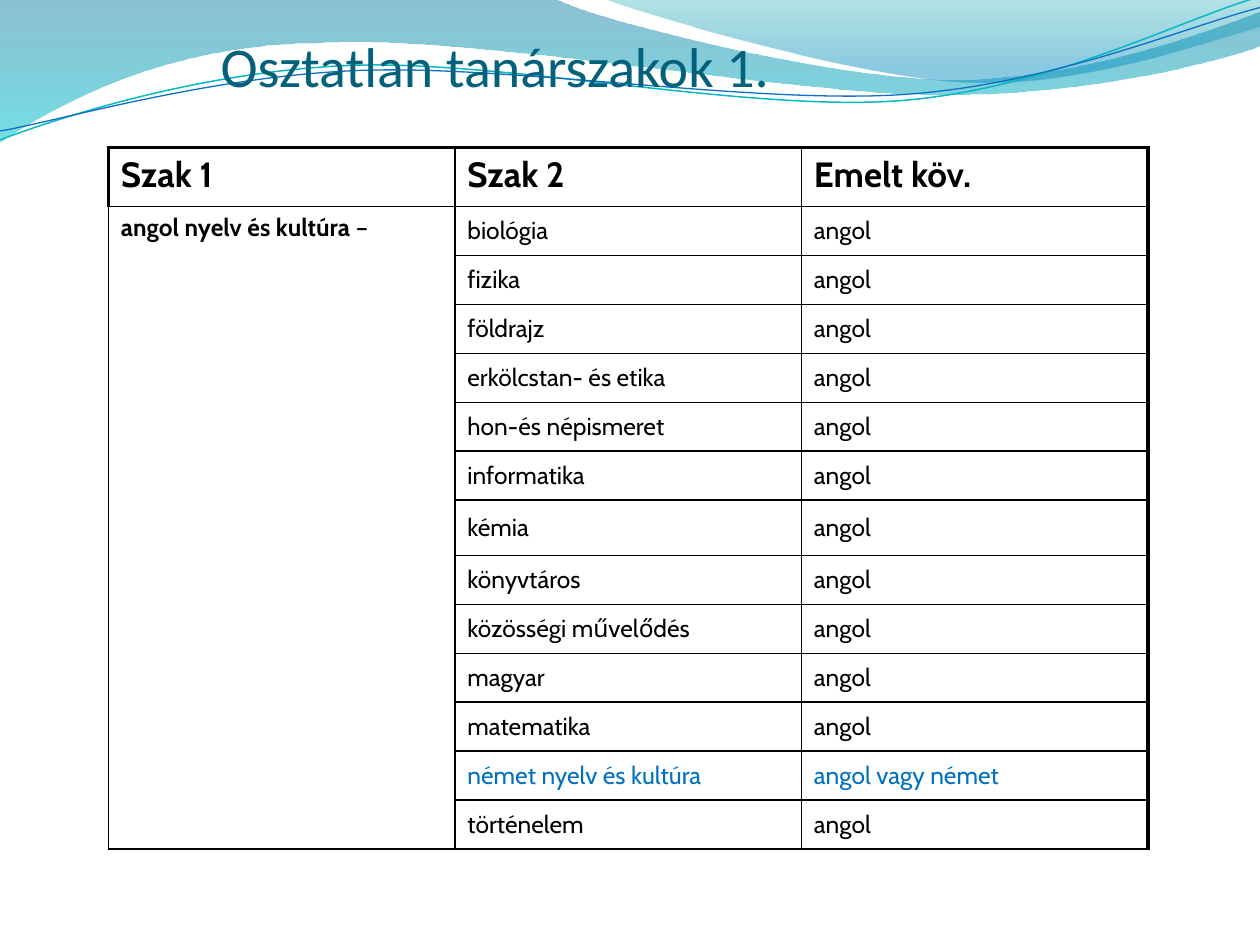
from math import cos, radians, sin

from lxml.etree import SubElement
from pptx import Presentation
from pptx.dml.color import RGBColor
from pptx.enum.text import MSO_ANCHOR
from pptx.oxml.ns import qn
from pptx.util import Inches, Pt

BLACK = RGBColor(0x00, 0x00, 0x00)
TITLE_TEAL = RGBColor(0x04, 0x61, 0x7B)
ACCENT_BLUE = RGBColor(0x00, 0x70, 0xC0)
LINE_TEAL = RGBColor(0x0A, 0xB8, 0xBF)
LINE_BLUE = RGBColor(0x0F, 0x6F, 0xC6)
BAND_BLUE = RGBColor(0x00, 0x74, 0xA1)
BAND_TEAL = RGBColor(0x00, 0xC6, 0xCF)
CREST_TEAL = RGBColor(0x00, 0xA1, 0xA9)
CREST_BLUE = RGBColor(0x00, 0x8B, 0xBF)

# Outlines in inches: each step holds one point, or three for a Bezier curve
LEFT_BAND = [
    [(0, -0.01)], [(4.4, -0.01)],
    [(4.76, 0.17), (6.64, 0.63), (7.58, 0.63)],
    [(8.53, 0.63), (9.58, 0.26), (10, 0.09)],
    [(10.01, 0.36)],
    [(9.83, 0.44), (8.7, 0.76), (7.46, 0.75)],
    [(6.22, 0.75), (3.82, 0.28), (2.57, 0.34)],
    [(1.29, 0.35), (0.46, 0.83), (-0.01, 1.13)],
    [(0, -0.01)],
]
RIGHT_CREST = [
    [(4.79, -0.01)],
    [(5.09, 0.11), (6.82, 0.62), (7.69, 0.65)],
    [(8.56, 0.69), (9.61, 0.32), (10, 0.21)],
    [(10, 0)], [(4.79, -0.01)],
]
TEAL_WAVE = [
    [(0, 1.11)],
    [(0.48, 0.93), (1.58, 0.57), (2.77, 0.52)],
    [(3.95, 0.47), (5.93, 0.89), (7.13, 0.8)],
    [(8.33, 0.71), (9.38, 0.15), (9.98, -0.02)],
]
BLUE_WAVE = [
    [(0, 1.04)],
    [(0.47, 0.96), (1.64, 0.61), (2.83, 0.56)],
    [(4.03, 0.51), (5.97, 0.83), (7.17, 0.75)],
    [(8.36, 0.67), (9.41, 0.21), (10, 0.06)],
]
WAVE_CENTER = (4.99, 0.58)
WAVE_TILT = -2.7

HEADERS = ["Szak 1", "Szak 2", "Emelt köv."]
GERMAN = "német nyelv és kultúra"
SECOND_MAJORS = [
    "biológia", "fizika", "földrajz", "erkölcstan- és etika",
    "hon-és népismeret", "informatika", "kémia", "könyvtáros",
    "közösségi művelődés", "magyar", "matematika", GERMAN, "történelem",
]
TABLE_HEIGHT, HEADER_HEIGHT, TALL_HEIGHT = 5.57, 0.47, 0.44


def add_text(paragraph, text, size=14, font="Cabin", color=BLACK, bold=False):
    run = paragraph.add_run()
    run.text = text
    run.font.size = Pt(size)
    run.font.name = font
    run.font.bold = bold
    run.font.color.rgb = color


def add_outline(slide, outline, close):
    """Build a freeform through the step ends, then bend its curved steps."""
    start, *ends = [tuple(Inches(v) for v in step[-1]) for step in outline]
    builder = slide.shapes.build_freeform(*start)
    builder.add_line_segments(ends, close=close)
    wave = builder.convert_to_shape()
    wave.shadow.inherit = False
    segments = list(wave._element.iter(qn("a:lnTo")))
    for segment, step in zip(segments, outline[1:]):
        if len(step) == 3:
            segment.tag = qn("a:cubicBezTo")
            for i, (x, y) in enumerate(step[:2]):
                control = SubElement(segment, qn("a:pt"), x=str(Inches(x) - wave.left),
                                     y=str(Inches(y) - wave.top))
                segment.insert(i, control)
    return wave


def add_band(slide, outline, stops):
    """Add a borderless band; each stop is position %, colour, opacity %."""
    band = add_outline(slide, outline, close=True)
    band.line.fill.background()
    band.fill.gradient()
    gradient = band.fill._xPr.find(qn("a:gradFill"))
    for child in list(gradient):
        gradient.remove(child)
    stop_list = SubElement(gradient, qn("a:gsLst"))
    for position, color, opacity in stops:
        stop = SubElement(stop_list, qn("a:gs"), pos=str(position * 1000))
        rgb = SubElement(stop, qn("a:srgbClr"), val=str(color))
        SubElement(rgb, qn("a:alpha"), val=str(opacity * 1000))
    SubElement(gradient, qn("a:lin"), ang="5400000", scaled="0")


def level(point):
    """Turn a point of a tilted wave back to the level."""
    angle = radians(-WAVE_TILT)
    dx, dy = point[0] - WAVE_CENTER[0], point[1] - WAVE_CENTER[1]
    return (WAVE_CENTER[0] + dx * cos(angle) - dy * sin(angle),
            WAVE_CENTER[1] + dx * sin(angle) + dy * cos(angle))


def add_wave_line(slide, outline, color, width):
    leveled = [[level(point) for point in step] for step in outline]
    wave = add_outline(slide, leveled, close=False)
    wave.rotation = WAVE_TILT
    wave.fill.background()
    wave.line.color.rgb = color
    wave.line.width = Pt(width)


def add_title(slide, text):
    title = slide.shapes.add_textbox(Inches(1.75), Inches(0.21), Inches(8.25), Inches(0.57))
    frame = title.text_frame
    frame.word_wrap = True
    frame.vertical_anchor = MSO_ANCHOR.BOTTOM
    frame.margin_left = frame.margin_right = frame.margin_bottom = 0
    add_text(frame.paragraphs[0], text, size=32, font="Calibri", color=TITLE_TEAL)


def set_borders(cell, left=1, right=1, top=1, bottom=1):
    properties = cell._tc.get_or_add_tcPr()
    sides = (("a:lnL", left), ("a:lnR", right), ("a:lnT", top), ("a:lnB", bottom))
    for tag, width in sides:
        border = SubElement(properties, qn(tag), w=str(Pt(width)))
        fill = SubElement(border, qn("a:solidFill"))
        SubElement(fill, qn("a:srgbClr"), val=str(BLACK))


def add_majors_table(slide):
    row_count = len(SECOND_MAJORS) + 1
    table = slide.shapes.add_table(
        row_count, len(HEADERS), Inches(0.86), Inches(1.17),
        Inches(8.25), Inches(TABLE_HEIGHT)).table
    table.first_row = table.horz_banding = False
    for column in table.columns:
        column.width = Inches(2.75)
    plain_height = (TABLE_HEIGHT - HEADER_HEIGHT - TALL_HEIGHT) / (row_count - 2)
    for row in table.rows:
        row.height = Inches(plain_height)
    table.rows[0].height = Inches(HEADER_HEIGHT)
    table.rows[SECOND_MAJORS.index("kémia") + 1].height = Inches(TALL_HEIGHT)

    # Thick rule along the top, right side and header's left side
    for r in range(row_count):
        for c in range(len(HEADERS)):
            cell = table.cell(r, c)
            set_borders(cell,
                        left=2.25 if r == c == 0 else 1,
                        right=2.25 if c == len(HEADERS) - 1 else 1,
                        top=2.25 if r == 0 else 1)
            cell.fill.background()

    # Header row
    for c, header in enumerate(HEADERS):
        add_text(table.cell(0, c).text_frame.paragraphs[0], header, size=20, bold=True)

    # First major spans all the rows below the header
    first_major = table.cell(1, 0)
    first_major.merge(table.cell(row_count - 1, 0))
    paragraph = first_major.text_frame.paragraphs[0]
    add_text(paragraph, "angol nyelv és kultúra", bold=True)
    add_text(paragraph, " –")

    # Second majors with their advanced-level requirement
    for r, major in enumerate(SECOND_MAJORS, start=1):
        is_german = major == GERMAN
        requirement = "angol vagy német" if is_german else "angol"
        for c, text in enumerate((major, requirement), start=1):
            cell = table.cell(r, c)
            cell.vertical_anchor = MSO_ANCHOR.MIDDLE
            add_text(cell.text_frame.paragraphs[0], text,
                     color=ACCENT_BLUE if is_german else BLACK)


def main():
    presentation = Presentation()
    presentation.slide_width = Inches(10)
    presentation.slide_height = Inches(7.5)
    slide = presentation.slides.add_slide(presentation.slide_layouts[6])

    # Wave decoration
    add_band(slide, LEFT_BAND, [(0, BAND_BLUE, 45), (100, BAND_TEAL, 55)])
    add_band(slide, RIGHT_CREST, [(0, CREST_TEAL, 30), (80, CREST_BLUE, 45)])
    add_wave_line(slide, TEAL_WAVE, LINE_TEAL, 0.85)
    add_wave_line(slide, BLUE_WAVE, LINE_BLUE, 0.75)

    # Content
    add_title(slide, "Osztatlan tanárszakok 1.")
    add_majors_table(slide)

    presentation.save("out.pptx")


if __name__ == "__main__":
    main()
